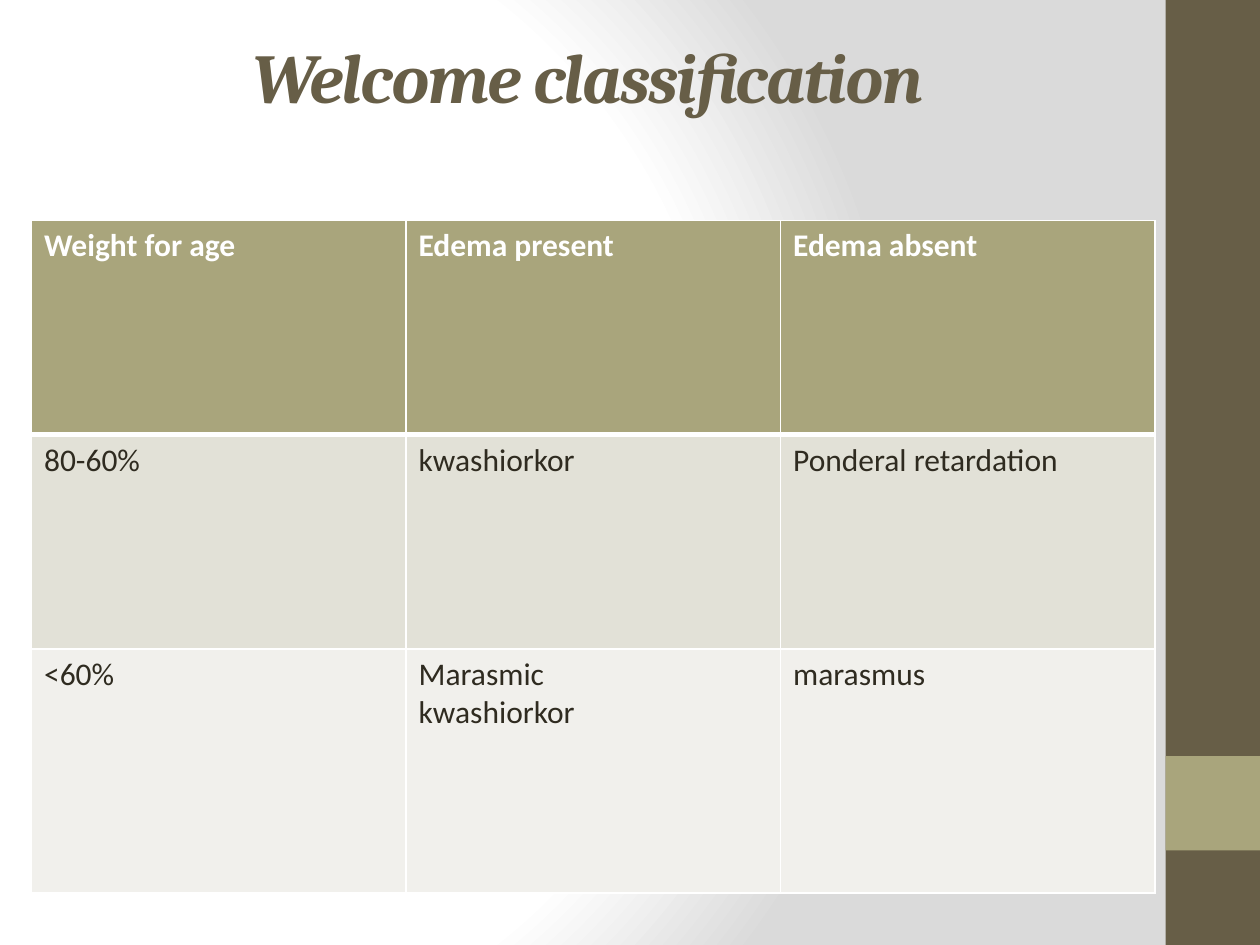
from pptx import Presentation
from pptx.dml.color import RGBColor
from pptx.enum.shapes import MSO_SHAPE
from pptx.enum.text import MSO_ANCHOR, PP_ALIGN
from pptx.oxml import parse_xml
from pptx.oxml.ns import nsdecls
from pptx.util import Inches, Pt

HUES = {"brown": "675E47", "olive": "A9A57C", "ink": "2F2B20", "white": "FFFFFF",
        "grey": "DADADA", "sand": "E2E1D7", "pale": "F1F0EC"}
ROWS = [
    ["Weight for age", "Edema present", "Edema absent"],
    ["80-60%", "kwashiorkor", "Ponderal retardation"],
    ["<60%", "Marasmic\nkwashiorkor", "marasmus"],
]
FILLS = ["olive", "sand", "pale"]


class Deck:
    """Slide style on a grid of 40 columns by 30 rows."""

    def __init__(self):
        self.prs = Presentation()
        self.prs.slide_width, self.prs.slide_height = Inches(10), Inches(7.5)
        self.slide = self.prs.slides.add_slide(self.prs.slide_layouts[5])

    def grid(self, *cells):
        return [Inches(n * 0.25) for n in cells]

    def hue(self, name):
        return RGBColor.from_string(HUES[name])

    def style(self, frame, face, size, hue, bold, slant=False):
        for para in frame.paragraphs:
            for run in para.runs:
                font = run.font
                font.name, font.size = face, Pt(size)
                font.bold, font.italic = bold, slant
                font.color.rgb = self.hue(hue)

    def back(self):
        stops = "".join(
            f'<a:gs pos="{pos * 1000}"><a:srgbClr val="{HUES[name]}"/></a:gs>'
            for pos, name in [(0, "white"), (75, "white"), (100, "grey")])
        self.slide.element.cSld.insert(0, parse_xml(
            f'<p:bg {nsdecls("p", "a")}><p:bgPr><a:gradFill rotWithShape="1">'
            f'<a:gsLst>{stops}</a:gsLst><a:path path="circle">'
            '<a:fillToRect l="20000" t="50000" r="100000" b="50000"/></a:path>'
            '</a:gradFill><a:effectLst/></p:bgPr></p:bg>'))

    def rect(self, hue, *box):
        shape = self.slide.shapes.add_shape(MSO_SHAPE.RECTANGLE, *self.grid(*box))
        shape.shadow.inherit = False
        shape.fill.solid()
        shape.fill.fore_color.rgb = self.hue(hue)
        shape.line.fill.background()

    def title(self, text, *box):
        head = self.slide.shapes.title
        head.left, head.top, head.width, head.height = self.grid(*box)
        frame = head.text_frame
        frame.text = text
        frame.word_wrap = True
        frame.vertical_anchor = MSO_ANCHOR.MIDDLE
        frame.margin_bottom = Inches(0.7)
        para = frame.paragraphs[0]
        para.alignment = PP_ALIGN.CENTER
        self.style(frame, "Cambria", 40, "brown", True, True)
        para.runs[0].font._element.set("spc", "-100")

    def edges(self, cell, top, base):
        sides = [("L", 1), ("R", 1), ("T", top), ("B", base)]
        props = cell._tc.get_or_add_tcPr()
        for spot, (side, width) in enumerate(sides):
            props.insert(spot, parse_xml(
                f'<a:ln{side} {nsdecls("a")} w="{Pt(width)}"><a:solidFill>'
                f'<a:srgbClr val="{HUES["white"]}"/></a:solidFill></a:ln{side}>'))

    def table(self, rows, fills, highs, *box):
        table = self.slide.shapes.add_table(
            len(rows), len(rows[0]), *self.grid(*box)).table
        for row, high in zip(table.rows, self.grid(*highs)):
            row.height = high
        for r, texts in enumerate(rows):
            for c, text in enumerate(texts):
                cell = table.cell(r, c)
                cell.text_frame.text = text
                self.style(cell.text_frame, "Calibri", 18,
                           "ink" if r else "white", r == 0)
                cell.fill.solid()
                cell.fill.fore_color.rgb = self.hue(fills[r])
                self.edges(cell, 3 if r == 1 else 1, 1 if r else 3)


def main():
    deck = Deck()
    deck.back()
    deck.rect("brown", 37, 0, 3, 30)
    deck.rect("olive", 37, 24, 3, 3)
    deck.title("Welcome classification", 2, 1.2, 33.32, 5)
    deck.table(ROWS, FILLS, [6.8, 6.8, 7.75], 1, 7, 35.67, 21.35)
    deck.prs.save("out.pptx")


if __name__ == "__main__":
    main()
